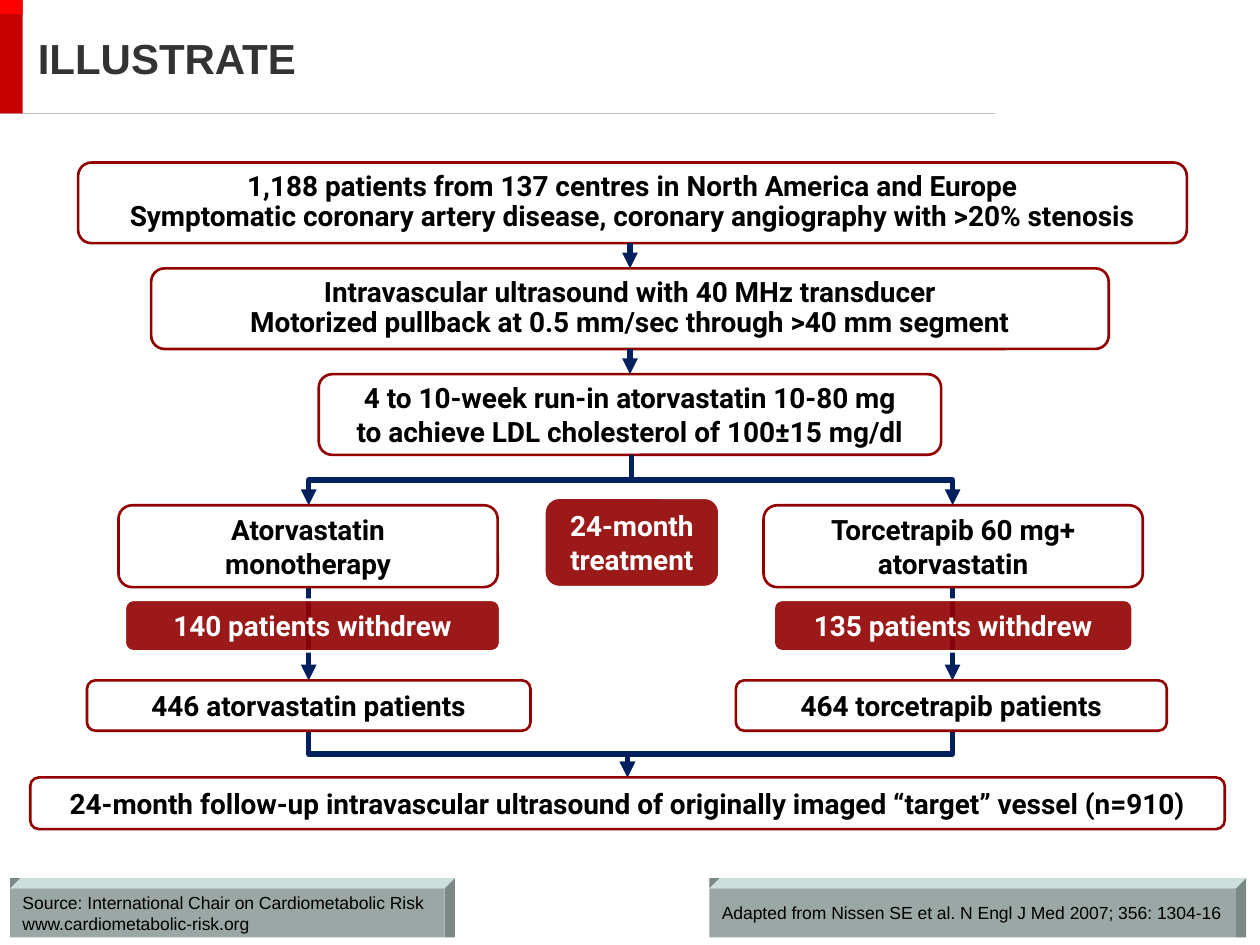
from lxml import etree
from pptx import Presentation
from pptx.dml.color import RGBColor
from pptx.enum.shapes import MSO_CONNECTOR, MSO_SHAPE
from pptx.enum.text import MSO_ANCHOR, PP_ALIGN
from pptx.oxml.ns import qn
from pptx.util import Inches, Pt

WHITE = RGBColor(0xFF, 0xFF, 0xFF)
BLACK = RGBColor(0, 0, 0)
TITLE_GREY = RGBColor(0x33, 0x33, 0x33)
RULE_GREY = RGBColor(0xC0, 0xC0, 0xC0)
RED = RGBColor(0xC8, 0, 0)
BRIGHT_RED = RGBColor(0xFE, 0, 0)
DARK_RED = RGBColor(0x92, 0, 0)
NAVY = RGBColor(0, 0x20, 0x60)
BAR_FACE = RGBColor(0x9A, 0xA7, 0xA5)
BAR_TOP = RGBColor(0xCD, 0xDF, 0xDD)
BAR_SIDE = RGBColor(0x7C, 0x88, 0x86)


class FlowSlide:
    """The current slide and the style of its parts."""

    body_font, plain_font = "Roboto", "Arial"
    bevel = 0.08

    def __init__(self, slide):
        self.slide = slide

    def paint(self, shape, fill, line=None, alpha=None):
        shape.shadow.inherit = False
        shape.fill.solid()
        shape.fill.fore_color.rgb = fill
        if alpha:
            color = shape._element.spPr.find(qn("a:solidFill"))[0]
            etree.SubElement(color, qn("a:alpha")).set("val", str(alpha * 1000))
        if line is None:
            shape.line.fill.background()
        else:
            shape.line.color.rgb = line
            shape.line.width = Pt(1.5)

    def label(self, shape, text, font, size, color, bold=False,
              align=PP_ALIGN.LEFT, spacing=None):
        tf = shape.text_frame
        tf.text = text
        tf.vertical_anchor = MSO_ANCHOR.MIDDLE
        for p in tf.paragraphs:
            p.alignment = align
            if spacing:
                p.line_spacing = spacing
            for r in p.runs:
                r.font.name, r.font.size, r.font.bold = font, Pt(size), bold
                r.font.color.rgb = color

    def title(self, text):
        shape = self.slide.shapes.title
        shape.left, shape.top = Inches(0.2), Inches(0)
        shape.width, shape.height = Inches(9.06), Inches(0.91)
        self.label(shape, text, self.plain_font, 24, TITLE_GREY, True)

    def rect(self, x, y, w, h, fill, kind=MSO_SHAPE.RECTANGLE):
        shape = self.slide.shapes.add_shape(
            kind, Inches(x), Inches(y), Inches(w), Inches(h))
        self.paint(shape, fill)
        return shape

    def box(self, x, y, w, h, text, spacing=None, solid=False):
        shape = self.rect(x, y, w, h, WHITE, MSO_SHAPE.ROUNDED_RECTANGLE)
        if solid:
            self.paint(shape, DARK_RED, WHITE, 90)
        else:
            self.paint(shape, WHITE, DARK_RED, 80)
        shape.text_frame.word_wrap = solid
        self.label(shape, text, self.body_font, 16, WHITE if solid else BLACK,
                   True, PP_ALIGN.CENTER, spacing)

    def facet(self, points, fill):
        (x, y), *rest = [(Inches(a), Inches(b)) for a, b in points]
        builder = self.slide.shapes.build_freeform(x, y)
        builder.add_line_segments(rest, close=True)
        self.paint(builder.convert_to_shape(), fill)

    def source_bar(self, x, y, w, h, text):
        d, right, bottom = self.bevel, x + w, y + h
        self.facet([(x, y), (x + d, y - d), (right + d, y - d), (right, y)], BAR_TOP)
        self.facet([(x, y), (x, y - d), (x + d, y - d)], BAR_SIDE)
        self.facet([(right, y), (right + d, y - d), (right + d, bottom),
                    (right, bottom)], BAR_SIDE)
        self.label(self.rect(x, y, w, h, BAR_FACE), text, self.plain_font, 10, BLACK)

    def line(self, x1, y1, x2, y2, color=NAVY, width=3, arrow=True,
             kind=MSO_CONNECTOR.STRAIGHT):
        cxn = self.slide.shapes.add_connector(
            kind, Inches(x1), Inches(y1), Inches(x2), Inches(y2))
        cxn.line.color.rgb = color
        cxn.line.width = Pt(width)
        properties = cxn._element.spPr
        if arrow:
            etree.SubElement(properties.find(qn("a:ln")), qn("a:tailEnd")).set(
                "type", "triangle")
        etree.SubElement(properties, qn("a:effectLst"))
        return cxn

    def elbow(self, x1, y1, x2, y2):
        """Down, across and down again: a level elbow turned a quarter."""
        run, drop = abs(x2 - x1), y2 - y1
        left = (x1 + x2 - drop) / 2
        top = (y1 + y2 - run) / 2
        cxn = self.line(left, top, left + drop, top + run, kind=MSO_CONNECTOR.ELBOW)
        xfrm = cxn._element.spPr.find(qn("a:xfrm"))
        to_right = x2 > x1
        xfrm.set("rot", str((270 if to_right else 90) * 60000))
        if to_right:
            xfrm.set("flipH", "1")


def main():
    prs = Presentation()
    prs.slide_width, prs.slide_height = Inches(10), Inches(7.5)
    s = FlowSlide(prs.slides.add_slide(prs.slide_layouts[5]))

    # Heading
    s.line(0, 0.9, 7.9, 0.9, RULE_GREY, 0.75, arrow=False)
    s.rect(0, 0, 0.18, 0.9, RED)
    s.rect(0, 0, 0.18, 0.11, BRIGHT_RED)
    s.title("ILLUSTRATE")

    # Study steps from enrolment to run-in
    s.box(0.62, 1.29, 8.8, 0.64,
          "1,188 patients from 137 centres in North America and Europe\v"
          "Symptomatic coronary artery disease, coronary angiography with >20% stenosis",
          spacing=0.9)
    s.box(1.2, 2.13, 7.6, 0.64,
          "Intravascular ultrasound with 40 MHz transducer\n"
          "Motorized pullback at 0.5 mm/sec through >40 mm segment", spacing=0.9)
    s.box(2.53, 2.97, 4.94, 0.64,
          "4 to 10-week run-in atorvastatin 10-80 mg\v"
          "to achieve LDL cholesterol of 100±15 mg/dl")
    for y in (1.93, 2.77):
        s.line(5, y, 5, y + 0.2)

    # Treatment arms: centre, treatment box, withdrawal label, remaining patients
    arms = [
        (2.45, (0.94, 3.01, "Atorvastatin\nmonotherapy"),
         (0.99, 2.98, "140 patients withdrew"),
         (0.69, 3.52, "446 atorvastatin patients")),
        (7.56, (6.06, 3.01, "Torcetrapib 60 mg+\vatorvastatin"),
         (6.14, 2.85, "135 patients withdrew"),
         (5.84, 3.42, "464 torcetrapib patients")),
    ]
    for center, *steps in arms:
        rows = zip(steps, (4.01, 4.76, 5.4), (0.65, 0.41, 0.4), (False, True, False))
        s.elbow(5.01, 3.61, center, 4.01)
        s.line(center, 4.65, center, 5.4)
        s.elbow(center, 5.8, 4.98, 6.17)
        for (x, w, text), y, h, solid in rows:
            s.box(x, y, w, h, text, solid=solid)
    s.box(4.32, 3.95, 1.39, 0.71, "24-month\vtreatment", solid=True)

    # Follow-up
    s.box(0.24, 6.17, 9.48, 0.41,
          "24-month follow-up intravascular ultrasound of originally imaged "
          "“target” vessel (n=910)")

    # Sources
    s.source_bar(0.08, 7.05, 3.45, 0.39,
                 "Source: International Chair on Cardiometabolic Risk\n"
                 "www.cardiometabolic-risk.org")
    s.source_bar(5.63, 7.05, 4.18, 0.39,
                 "Adapted from Nissen SE et al. N Engl J Med 2007; 356: 1304-16")

    prs.save("out.pptx")


if __name__ == "__main__":
    main()
